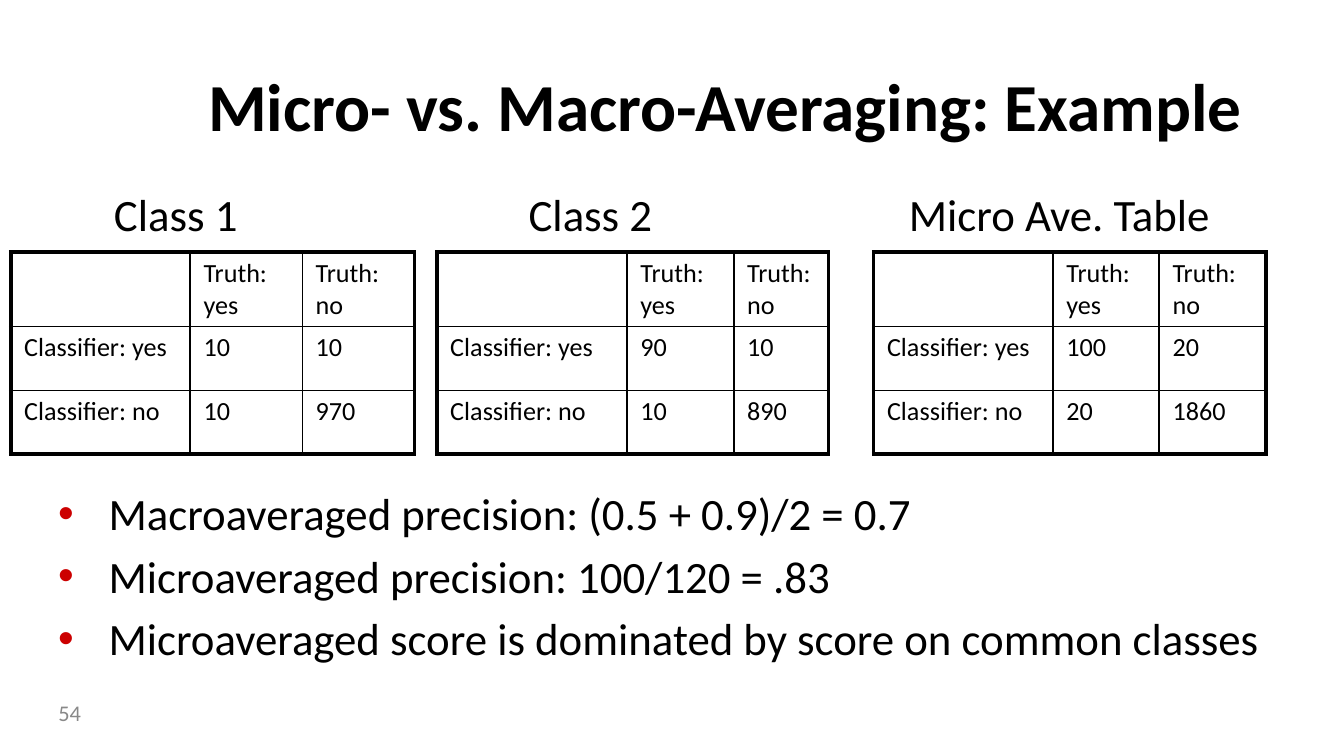
from dataclasses import dataclass

from lxml.etree import SubElement
from pptx import Presentation
from pptx.dml.color import RGBColor
from pptx.enum.text import MSO_ANCHOR
from pptx.oxml.ns import qn
from pptx.util import Pt

PX = 4572  # 200 px to the inch
FONT = "Calibri"
BLACK, GREY, RED = "000000", "898989", "CC0000"
THICK, THIN = Pt(2.25), Pt(1)
ROWS = (111, 95, 95)


@dataclass
class Label:
    text: str
    x: int
    y: int
    w: int
    h: int
    size: int = 24
    color: str = BLACK
    bold: bool = False
    anchor: MSO_ANCHOR = MSO_ANCHOR.TOP


@dataclass
class Grid:
    x: int
    cols: tuple[int, ...]
    yes: tuple[str, str]
    no: tuple[str, str]


LABELS = [
    Label("54", 67, 1030, 433, 76, 12, GREY),
    Label("Micro- vs. Macro-Averaging: Example", 290, 62, 1678, 163, 36,
          bold=True, anchor=MSO_ANCHOR.BOTTOM),
    Label("Class 1", 150, 268, 400, 100),
    Label("Class 2", 767, 268, 400, 100),
    Label("Micro Ave. Table", 1333, 268, 583, 100),
]
GRIDS = [
    Grid(16, (267, 167, 167), ("10", "10"), ("10", "970")),
    Grid(650, (283, 159, 141), ("90", "10"), ("10", "890")),
    Grid(1300, (267, 158, 159), ("100", "20"), ("20", "1860")),
]
POINTS = Label("Macroaveraged precision: (0.5 + 0.9)/2 = 0.7\n"
               "Microaveraged precision: 100/120 = .83\n"
               "Microaveraged score is dominated by score on common classes",
               67, 713, 1866, 366)


def px(n: int) -> int:
    return n * PX


def rgb(code: str) -> RGBColor:
    return RGBColor.from_string(code)


def style(para, size: int, color: str = BLACK, bold: bool = False) -> None:
    font = para.font
    font.name, font.size, font.bold = FONT, Pt(size), bold
    font.color.rgb = rgb(color)


def add_label(slide, item: Label):
    box = slide.shapes.add_textbox(px(item.x), px(item.y), px(item.w), px(item.h))
    frame = box.text_frame
    frame.word_wrap = True
    frame.vertical_anchor = item.anchor
    frame.text = item.text
    for para in frame.paragraphs:
        style(para, item.size, item.color, item.bold)
    return frame


def add_bullet(para) -> None:
    para.space_after = Pt(4.8)
    props = para._p.get_or_add_pPr()
    props.set("marL", str(px(75)))
    props.set("indent", str(px(-75)))
    # Bullet marks come before the default run style
    marks = [SubElement(props, qn(tag)) for tag in ("a:buClr", "a:buFont", "a:buChar")]
    SubElement(marks[0], qn("a:srgbClr")).set("val", RED)
    marks[1].set("typeface", "Arial")
    marks[2].set("char", "•")
    props.append(props.find(qn("a:defRPr")))


def add_edge(cell, side: str, width: int) -> None:
    line = SubElement(cell._tc.get_or_add_tcPr(), qn(f"a:ln{side}"))
    line.set("w", str(width))
    fill = SubElement(line, qn("a:solidFill"))
    SubElement(fill, qn("a:srgbClr")).set("val", BLACK)


def add_grid(slide, grid: Grid) -> None:
    data = [("", "Truth: yes", "Truth: no"),
            ("Classifier: yes", *grid.yes),
            ("Classifier: no", *grid.no)]
    table = slide.shapes.add_table(len(ROWS), len(grid.cols), px(grid.x), px(375),
                                   px(sum(grid.cols)), px(sum(ROWS))).table
    table.first_row = table.horz_banding = False
    for col, width in zip(table.columns, grid.cols):
        col.width = px(width)
    for row, height in zip(table.rows, ROWS):
        row.height = px(height)
    for r, texts in enumerate(data):
        for c, text in enumerate(texts):
            cell = table.cell(r, c)
            cell.margin_left = cell.margin_right = px(20)
            cell.margin_top = cell.margin_bottom = px(8)
            cell.text = text
            style(cell.text_frame.paragraphs[0], 14)
            # Thick frame outside, thin rules inside
            outer = {"L": c == 0, "R": c == len(grid.cols) - 1,
                     "T": r == 0, "B": r == len(ROWS) - 1}
            for side, thick in outer.items():
                add_edge(cell, side, THICK if thick else THIN)
            cell.fill.background()


def main() -> None:
    deck = Presentation()
    deck.slide_width, deck.slide_height = px(2000), px(1125)
    slide = deck.slides.add_slide(deck.slide_layouts[6])

    # Page number, title and table headings
    for item in LABELS:
        add_label(slide, item)

    # Confusion tables
    for grid in GRIDS:
        add_grid(slide, grid)

    # Conclusions
    for para in add_label(slide, POINTS).paragraphs:
        add_bullet(para)

    deck.save("out.pptx")


if __name__ == "__main__":
    main()
